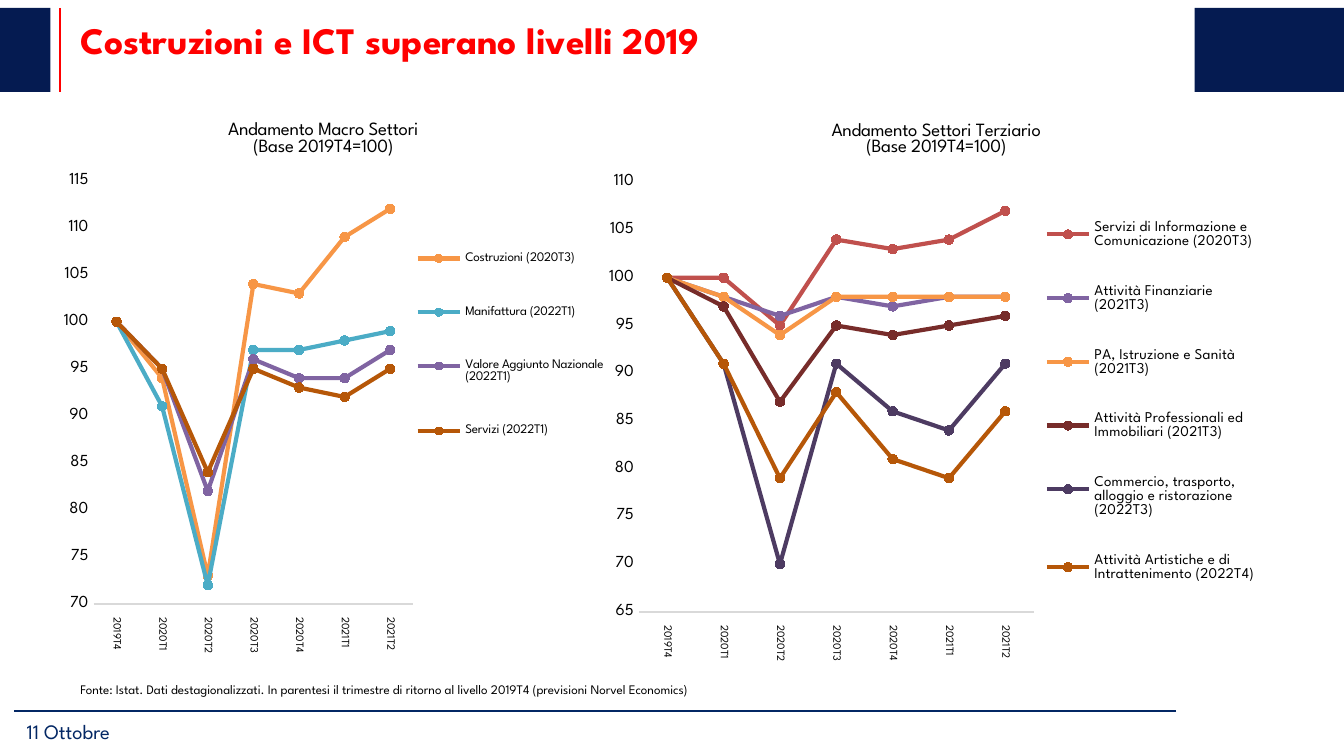
from dataclasses import dataclass

import pptx
import pptx.chart.data
import pptx.dml.color
import pptx.enum.chart
import pptx.enum.shapes
import pptx.oxml
import pptx.oxml.ns
import pptx.util
from lxml import etree

Pt = pptx.util.Pt
Box = tuple[float, float, float, float]


@dataclass(frozen=True)
class Theme:
    font: str = "League Spartan"
    black: str = "000000"
    band: str = "051B51"
    accent: str = "FF0000"
    footer: str = "032764"
    axis: str = "D9D9D9"
    orange: str = "F79646"
    teal: str = "4BACC6"
    purple: str = "8064A2"
    brown: str = "B65708"
    red: str = "C0504D"
    maroon: str = "772C2A"
    plum: str = "4D3B62"
    title_size: float = 20
    footer_size: float = 11
    chart_title_size: float = 10
    value_size: float = 9
    category_size: float = 6
    source_size: float = 7


THEME = Theme()
QUARTERS = ("2019T4", "2020T1", "2020T2", "2020T3", "2020T4", "2021T1", "2021T2")


@dataclass(frozen=True)
class Sector:
    name: str
    color: str
    values: tuple[int, ...]


@dataclass(frozen=True)
class Trend:
    """A line chart; box is in points, plot and legend are fractions of it."""
    title: tuple[str, str]
    box: Box
    plot: Box
    legend: Box
    legend_size: float
    low: int
    high: int
    sectors: tuple[Sector, ...]


BASE = "(Base 2019T4=100)"
TRENDS = (
    Trend(("Andamento Macro Settori", BASE), (18.7, 52.6, 308.9, 300.2),
          (0.102, 0.147, 0.554, 0.756), (0.66, 0.2, 0.33, 0.48), 7, 70, 115, (
        Sector("Costruzioni (2020T3)", THEME.orange, (100, 94, 73, 104, 103, 109, 112)),
        Sector("Manifattura (2022T1)", THEME.teal, (100, 91, 72, 97, 97, 98, 99)),
        Sector("Valore Aggiunto Nazionale (2022T1)", THEME.purple,
               (100, 95, 82, 96, 94, 94, 97)),
        Sector("Servizi (2022T1)", THEME.brown, (100, 95, 84, 95, 93, 92, 95)),
    )),
    Trend(("Andamento Settori Terziario", BASE), (319, 52.6, 365, 308.9),
          (0.064, 0.146, 0.579, 0.745), (0.65, 0.15, 0.33, 0.75), 8, 65, 110, (
        Sector("Servizi di Informazione e Comunicazione (2020T3)", THEME.red,
               (100, 100, 95, 104, 103, 104, 107)),
        Sector("Attività Finanziarie (2021T3)", THEME.purple,
               (100, 98, 96, 98, 97, 98, 98)),
        Sector("PA, Istruzione e Sanità (2021T3)", THEME.orange,
               (100, 98, 94, 98, 98, 98, 98)),
        Sector("Attività Professionali ed Immobiliari (2021T3)", THEME.maroon,
               (100, 97, 87, 95, 94, 95, 96)),
        Sector("Commercio, trasporto, alloggio e ristorazione (2022T3)", THEME.plum,
               (100, 91, 70, 91, 86, 84, 91)),
        Sector("Attività Artistiche e di Intrattenimento (2022T4)", THEME.brown,
               (100, 91, 79, 88, 81, 79, 86)),
    )),
)


def rgb(color: str) -> pptx.dml.color.RGBColor:
    return pptx.dml.color.RGBColor.from_string(color)


def set_font(font, size: float, color: str = THEME.black, bold: bool = False) -> None:
    font.name = THEME.font
    font.size = Pt(size)
    font.bold = bold
    font.color.rgb = rgb(color)


def paint(fill, color: str) -> None:
    fill.solid()
    fill.fore_color.rgb = rgb(color)


def add_band(slide, box: Box) -> None:
    band = slide.shapes.add_shape(pptx.enum.shapes.MSO_SHAPE.RECTANGLE, *map(Pt, box))
    band.shadow.inherit = False
    paint(band.fill, THEME.band)
    band.line.fill.background()


def add_rule(slide, ends: Box, color: str) -> None:
    rule = slide.shapes.add_connector(
        pptx.enum.shapes.MSO_CONNECTOR.STRAIGHT, *map(Pt, ends))
    rule.line.color.rgb = rgb(color)
    rule.line.width = Pt(1)
    etree.SubElement(rule._element.spPr, pptx.oxml.ns.qn("a:effectLst"))


def add_text(slide, box: Box, text: str, size: float, color: str,
             bold: bool = False) -> None:
    frame = slide.shapes.add_textbox(*map(Pt, box)).text_frame
    frame.word_wrap = True
    frame.text = text
    set_font(frame.paragraphs[0].font, size, color, bold)


def set_layout(parent, index: int, area: Box, inner: bool = False) -> None:
    """Fix the place of a chart part, as fractions of the whole chart."""
    for old in parent.findall(pptx.oxml.ns.qn("c:layout")):
        parent.remove(old)
    settings = [("layoutTarget", "inner")] if inner else []
    settings += [("xMode", "edge"), ("yMode", "edge"), *zip("xywh", area)]
    layout = etree.Element(pptx.oxml.ns.qn("c:layout"))
    manual = etree.SubElement(layout, pptx.oxml.ns.qn("c:manualLayout"))
    for tag, value in settings:
        etree.SubElement(manual, pptx.oxml.ns.qn(f"c:{tag}"), val=str(value))
    parent.insert(index, layout)


def style_axes(chart, trend: Trend) -> None:
    none = pptx.enum.chart.XL_TICK_MARK.NONE
    quarters, index = chart.category_axis, chart.value_axis
    for axis, size in ((quarters, THEME.category_size), (index, THEME.value_size)):
        axis.major_tick_mark = axis.minor_tick_mark = none
        axis.has_major_gridlines = False
        set_font(axis.tick_labels.font, size)
    quarters.tick_label_position = pptx.enum.chart.XL_TICK_LABEL_POSITION.LOW
    quarters.format.line.color.rgb = rgb(THEME.axis)
    quarters.format.line.width = Pt(0.75)
    quarters._element.txPr.bodyPr.set("rot", "5400000")
    index.minimum_scale, index.maximum_scale = trend.low, trend.high
    index.major_unit = 5
    index.tick_labels.number_format = "0"
    index.tick_labels.number_format_is_linked = False
    index.format.line.fill.background()


def add_trend(slide, trend: Trend) -> None:
    data = pptx.chart.data.CategoryChartData(number_format="0")
    data.categories = QUARTERS
    for sector in trend.sectors:
        data.add_series(sector.name, sector.values)
    chart = slide.shapes.add_chart(
        pptx.enum.chart.XL_CHART_TYPE.LINE_MARKERS, *map(Pt, trend.box), data).chart
    set_font(chart.font, THEME.chart_title_size)

    chart.has_title = True
    heading = chart.chart_title.text_frame
    heading.text = "\n".join(trend.title)
    for paragraph in heading.paragraphs:
        set_font(paragraph.font, THEME.chart_title_size)

    chart.has_legend = True
    chart.legend.position = pptx.enum.chart.XL_LEGEND_POSITION.RIGHT
    chart.legend.include_in_layout = False
    set_font(chart.legend.font, trend.legend_size)
    set_layout(chart.legend._element, 1, trend.legend)
    set_layout(chart._chartSpace.chart.plotArea, 0, trend.plot, inner=True)
    style_axes(chart, trend)

    chart.plots[0].vary_by_categories = False
    for line, sector in zip(chart.plots[0].series, trend.sectors):
        line.smooth = False
        line.format.line.color.rgb = rgb(sector.color)
        line.format.line.width = Pt(2.25)
        line.marker.style = pptx.enum.chart.XL_MARKER_STYLE.CIRCLE
        line.marker.size = 5
        paint(line.marker.format.fill, sector.color)
        line.marker.format.line.color.rgb = rgb(sector.color)


def main() -> None:
    deck = pptx.Presentation()
    deck.slide_width, deck.slide_height = Pt(720), Pt(405)
    slide = deck.slides.add_slide(deck.slide_layouts[6])
    add_band(slide, (640, 4.3, 80, 45))
    add_rule(slide, (32.2, 4.3, 32.2, 49.3), THEME.accent)
    add_band(slide, (0, 4.3, 27, 45))
    add_text(slide, (36, 5.8, 582, 43), "Costruzioni e ICT superano livelli 2019",
             THEME.title_size, THEME.accent, bold=True)
    add_rule(slide, (630, 380.7, 7.5, 380.7), THEME.footer)
    add_text(slide, (36, 361.5, 420.5, 16),
             "Fonte: Istat. Dati destagionalizzati. In parentesi il trimestre di ritorno "
             "al livello 2019T4 (previsioni Norvel Economics)",
             THEME.source_size, THEME.black)
    for trend in TRENDS:
        add_trend(slide, trend)
    add_text(slide, (7.2, 381.6, 632, 23.4), "11 Ottobre",
             THEME.footer_size, THEME.footer)
    deck.save("out.pptx")


if __name__ == "__main__":
    main()
